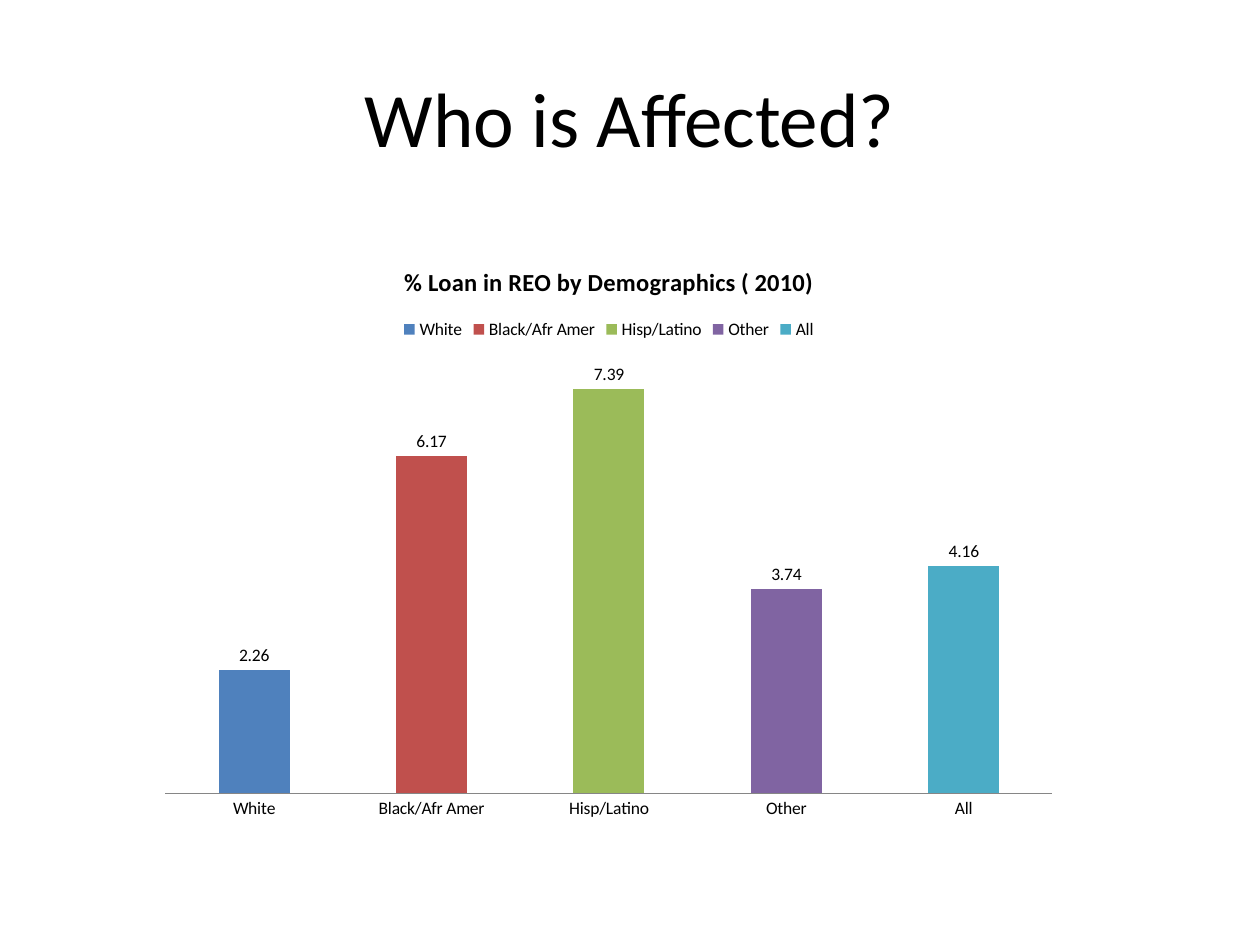
"""Build the slide showing the share of loans in REO by demographic group."""
from typing import NamedTuple

from pptx import Presentation, util as u
from pptx.chart.data import CategoryChartData
from pptx.dml.color import RGBColor
from pptx.enum import chart as charts, text

PX = 914400 / 126
FONT = "Calibri"
COLORS = {
    "text": "000000",
    "axis": "868686",
    "blue": "4F81BD",
    "red": "C0504D",
    "green": "9BBB59",
    "purple": "8064A2",
    "aqua": "4BACC6",
}


class Frame(NamedTuple):
    left: int
    top: int
    width: int
    height: int

    def emu(self) -> list[int]:
        return [px(length) for length in self]


class Group(NamedTuple):
    name: str
    percent: float
    color: str


TITLE_FRAME = Frame(63, 38, 1134, 158)
CHART_FRAME = Frame(147, 242, 924, 588)
GROUPS = [
    Group("White", 2.26, "blue"),
    Group("Black/Afr Amer", 6.17, "red"),
    Group("Hisp/Latino", 7.39, "green"),
    Group("Other", 3.74, "purple"),
    Group("All", 4.16, "aqua"),
]


def px(length: int) -> int:
    """Turn a length in px into EMU."""
    return round(length * PX)


def color(name: str) -> RGBColor:
    """Look up a named colour."""
    return RGBColor.from_string(COLORS[name])


def style_font(font, size: int, bold: bool = False) -> None:
    """Set the face, size, weight and colour of a font."""
    font.name = FONT
    font.size = u.Pt(size)
    font.bold = bold
    font.color.rgb = color("text")


def write(frame, content: str, *, size: int, bold: bool = False) -> None:
    """Write one centred, formatted line into a text frame."""
    para = frame.paragraphs[0]
    para.alignment = text.PP_ALIGN.CENTER
    span = para.add_run()
    span.text = content
    style_font(span.font, size, bold)


def add_title(page, content: str) -> None:
    """Place and fill the title placeholder."""
    box = page.shapes.title
    box.left, box.top, box.width, box.height = TITLE_FRAME.emu()
    box.text_frame.vertical_anchor = text.MSO_ANCHOR.MIDDLE
    write(box.text_frame, content, size=44)


def add_group_chart(page, heading: str, groups: list[Group]) -> None:
    """Draw one column per group, each in its own colour."""
    data = CategoryChartData(number_format="0.00")
    data.categories = [group.name for group in groups]
    data.add_series("Series 1", [group.percent for group in groups])
    chart = page.shapes.add_chart(
        charts.XL_CHART_TYPE.COLUMN_CLUSTERED, *CHART_FRAME.emu(), data
    ).chart
    style_font(chart.font, 10)
    chart.has_title = True
    write(chart.chart_title.text_frame, heading, size=14, bold=True)
    chart.chart_title.include_in_layout = False
    chart.has_legend = True
    chart.legend.position = charts.XL_LEGEND_POSITION.TOP
    chart.legend.include_in_layout = False

    category_axis = chart.category_axis
    category_axis.major_tick_mark = charts.XL_TICK_MARK.NONE
    category_axis.format.line.color.rgb = color("axis")
    value_axis = chart.value_axis
    value_axis.visible = False
    value_axis.has_major_gridlines = False
    value_axis.minimum_scale = 0
    value_axis.maximum_scale = 8

    plot = chart.plots[0]
    plot.vary_by_categories = True
    plot.gap_width = 150
    plot.overlap = -25
    plot.has_data_labels = True
    labels = plot.data_labels
    labels.show_value = True
    labels.position = charts.XL_LABEL_POSITION.OUTSIDE_END
    style_font(labels.font, 10)
    for index, group in enumerate(groups):
        fill = plot.series[0].points[index].format.fill
        fill.solid()
        fill.fore_color.rgb = color(group.color)


def main() -> None:
    """Build and save the deck."""
    deck = Presentation()
    deck.slide_width, deck.slide_height = px(1260), px(945)
    page = deck.slides.add_slide(deck.slide_layouts.get_by_name("Title Only"))
    add_title(page, "Who is Affected?")
    add_group_chart(page, "% Loan in REO by Demographics ( 2010)", GROUPS)
    deck.save("out.pptx")


if __name__ == "__main__":
    main()
